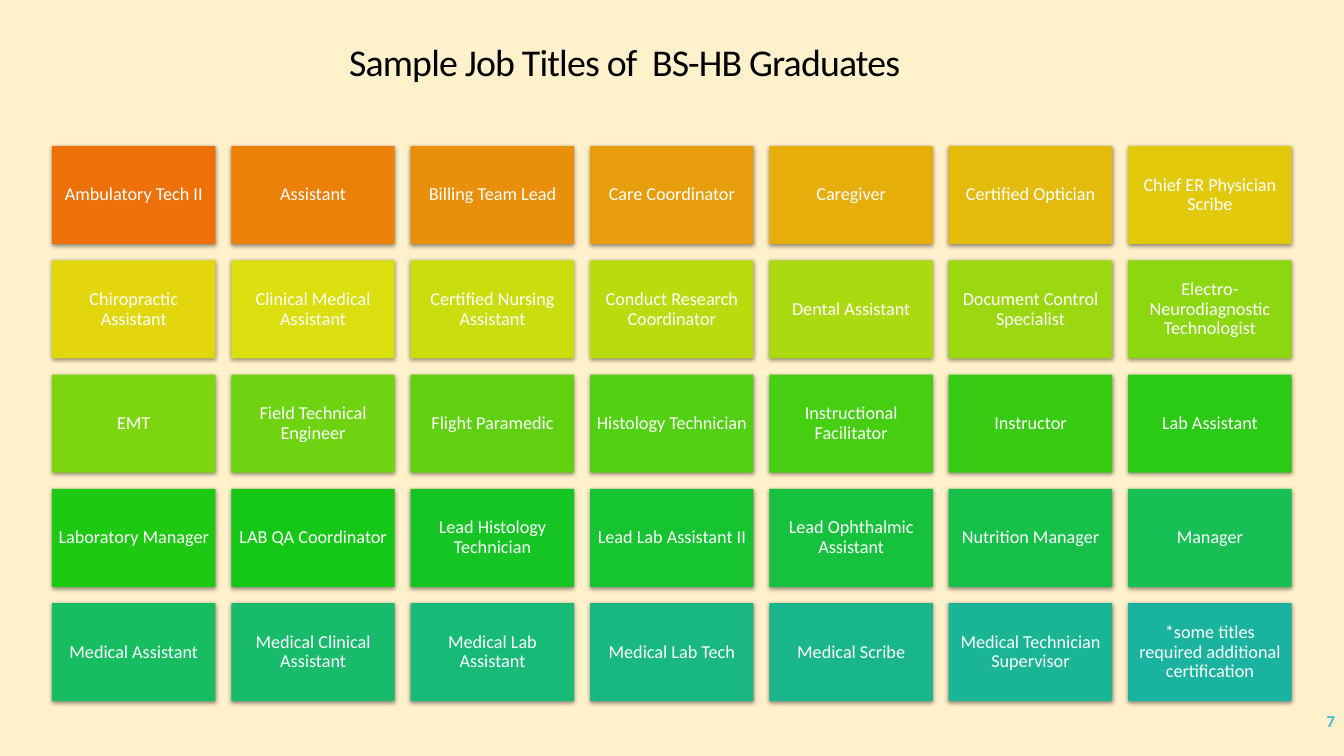
import colorsys
import lxml.etree
import pptx
import pptx.dml.color
import pptx.enum.shapes
import pptx.enum.text
import pptx.oxml
import pptx.oxml.ns
import pptx.util

Cm = pptx.util.Cm
RGB = pptx.dml.color.RGBColor
ALIGN = pptx.enum.text.PP_ALIGN
MIDDLE = pptx.enum.text.MSO_ANCHOR.MIDDLE

COLORS = {
    "page": "FFF1CB",
    "title": "000000",
    "label": "FFFFFF",
    "number": "40BAD2",
    "first": "EE7008",
    "last": "1AB39F",
}
JOBS = [
    ["Ambulatory Tech II", "Assistant", "Billing Team Lead", "Care Coordinator",
     "Caregiver", "Certified Optician", "Chief ER Physician Scribe"],
    ["Chiropractic Assistant", "Clinical Medical Assistant", "Certified Nursing Assistant",
     "Conduct Research Coordinator", "Dental Assistant", "Document Control Specialist",
     "Electro-Neurodiagnostic Technologist"],
    ["EMT", "Field Technical Engineer", "Flight Paramedic", "Histology Technician",
     "Instructional Facilitator", "Instructor", "Lab Assistant"],
    ["Laboratory Manager", "LAB QA Coordinator", "Lead Histology Technician",
     "Lead Lab Assistant II", "Lead Ophthalmic Assistant", "Nutrition Manager", "Manager"],
    ["Medical Assistant", "Medical Clinical Assistant", "Medical Lab Assistant",
     "Medical Lab Tech", "Medical Scribe", "Medical Technician Supervisor",
     "*some titles required additional certification"],
]
SHADOW = (
    '<a:effectLst %s><a:outerShdw blurRad="44450" dist="13970" dir="5400000" '
    'algn="ctr" rotWithShape="0"><a:srgbClr val="000000"><a:alpha val="45000"/>'
    '</a:srgbClr></a:outerShdw></a:effectLst>' % pptx.oxml.ns.nsdecls("a")
)


def write(shape, text, size, color, align=ALIGN.CENTER, bold=False, pad=0.13, space=0.9):
    frame = shape.text_frame
    look = {"word_wrap": True, "vertical_anchor": MIDDLE,
            "auto_size": pptx.enum.text.MSO_AUTO_SIZE.NONE}
    for side in ("left", "right", "top", "bottom"):
        look["margin_" + side] = Cm(pad)
    for name, value in look.items():
        setattr(frame, name, value)
    para = frame.paragraphs[0]
    para.alignment = align
    para.line_spacing = space
    run = para.add_run()
    run.text = text
    for name, value in {"name": "Calibri", "size": pptx.util.Pt(size), "bold": bold}.items():
        setattr(run.font, name, value)
    run.font.color.rgb = RGB.from_string(COLORS[color])
    return run


def to_hls(color):
    return colorsys.rgb_to_hls(*(part / 255 for part in RGB.from_string(color)))


deck = pptx.Presentation()
deck.slide_width = Cm(33.87)
deck.slide_height = Cm(19.05)
slide = deck.slides.add_slide(deck.slide_layouts[5])
slide.background.fill.solid()
slide.background.fill.fore_color.rgb = RGB.from_string(COLORS["page"])

title = slide.shapes.title
place = {"left": Cm(0), "top": Cm(1.02), "width": Cm(31.47), "height": Cm(1.19)}
for name, value in place.items():
    setattr(title, name, value)
run = write(title, "Sample Job Titles of  BS-HB Graduates", 27, "title")
run.font._element.set("spc", "-60")

first = to_hls(COLORS["first"])
last = to_hls(COLORS["last"])
cols = len(JOBS[0])
steps = len(JOBS) * cols - 1
for row, jobs in enumerate(JOBS):
    for col, job in enumerate(jobs):
        card = slide.shapes.add_shape(
            pptx.enum.shapes.MSO_SHAPE.RECTANGLE,
            Cm(1.31 + 4.52 * col), Cm(3.68 + 2.88 * row), Cm(4.12), Cm(2.47))
        part = (row * cols + col) / steps
        tone = [a + (b - a) * part for a, b in zip(first, last)]
        card.fill.solid()
        card.fill.fore_color.rgb = RGB(*(round(c * 255) for c in colorsys.hls_to_rgb(*tone)))
        card.line.fill.background()
        card._element.spPr.append(pptx.oxml.parse_xml(SHADOW))
        write(card, job, 13, "label")

number = slide.shapes.add_textbox(Cm(29.54), Cm(17.65), Cm(4.24), Cm(1.02))
write(number, "7", 12, "number", ALIGN.RIGHT, True, space=1.0)

deck.save("out.pptx")
